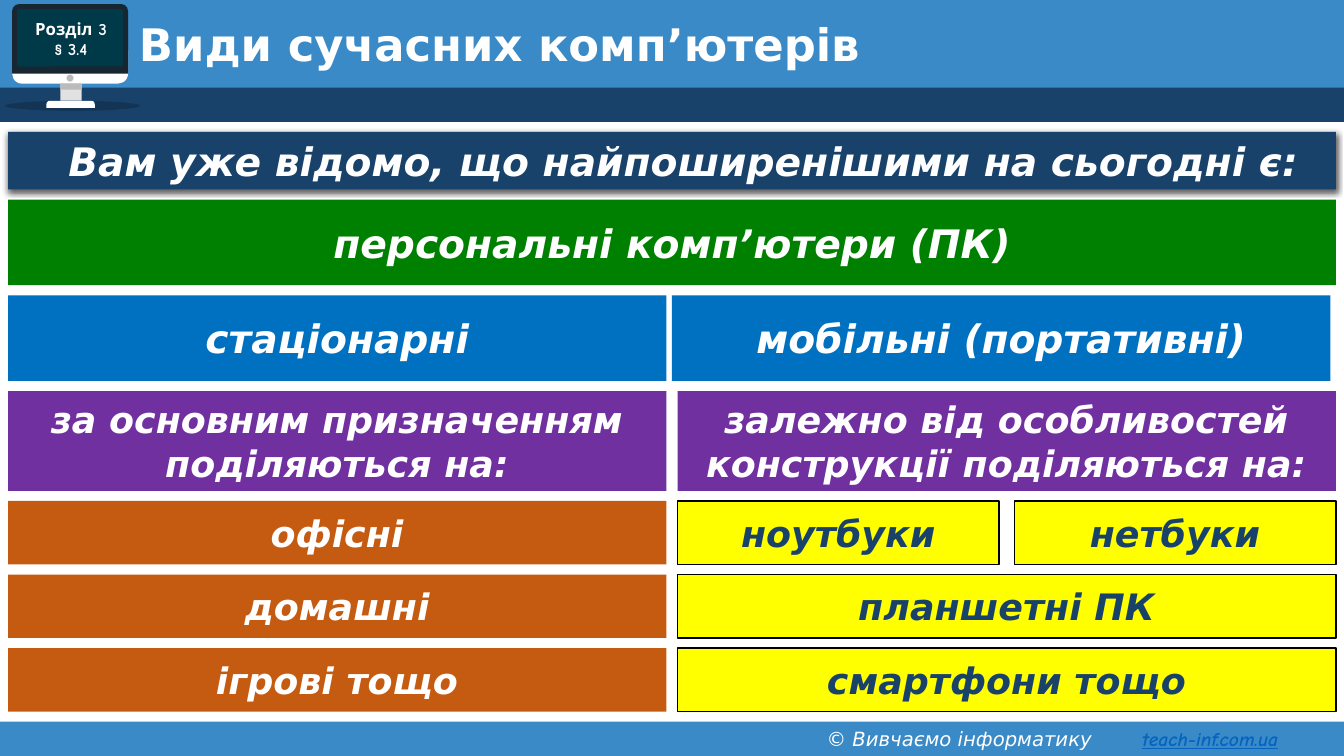
from lxml import etree
from pptx import Presentation, util as u
from pptx.dml.color import RGBColor
from pptx.enum import shapes, text
from pptx.oxml import ns

W, H = 13.33, 7.5
SANS, COMIC = "DejaVu Sans", "Comic Neue"
WHITE, BLACK, NAVY, SKY = "FFFFFF", "000000", "19426B", "398AC7"
RECT, OVAL = shapes.MSO_SHAPE.RECTANGLE, shapes.MSO_SHAPE.OVAL
ROUND, CAPPED = shapes.MSO_SHAPE.ROUNDED_RECTANGLE, shapes.MSO_SHAPE.ROUND_2_SAME_RECTANGLE
CENTER = text.PP_ALIGN.CENTER

# Content
TITLE = "Види сучасних комп’ютерів"
SECTION = ["Розділ 3", "§ 3.4"]
FOOTER, SITE = "© Вивчаємо інформатику", "teach-inf.com.ua"
INTRO = "Вам уже відомо, що найпоширенішими на сьогодні є:"

# Bands: left, top, width, height, fill
BANDS = [
    (0, 0, W, 0.91, SKY),
    (0, 0.87, W, 0.34, NAVY),
    (0, H - 0.34, W, 0.34, SKY),
]
# Monitor parts: preset, box, fill, corner adjustments
MONITOR = [
    (OVAL, (0.05, 1, 1.34, 0.1), BLACK, []),
    (CAPPED, (0.12, 0.5, 1.15, 0.33), WHITE, [0, 0.3]),
    (CAPPED, (0.12, 0.04, 1.15, 0.69), "182632", [0.1, 0]),
    (RECT, (0.6, 0.83, 0.21, 0.17), "E1E1E1", []),
    (RECT, (0.6, 0.83, 0.21, 0.06), "BBBBBB", []),
    (CAPPED, (0.46, 1, 0.48, 0.07), WHITE, [0.5, 0]),
    (OVAL, (0.66, 0.74, 0.07, 0.07), "BBBBBB", []),
    (ROUND, (0.17, 0.09, 1.05, 0.57), "003948", [0.036]),
]

# Grid: two halves, the right one split into two quarters
LEFT, TOP, HALF, COL_GAP, ROW_GAP = 0.08, 1.31, 6.53, 0.11, 0.1
SPLIT_GAP = 0.15
QUARTER = (HALF - SPLIT_GAP) / 2
RIGHT = LEFT + HALF + COL_GAP
COLUMNS = {
    "full": (LEFT, 2 * HALF + COL_GAP),
    "left": (LEFT, HALF),
    "right": (RIGHT, HALF),
    "near": (LEFT + HALF + COL_GAP / 2, HALF),
    "right 1": (RIGHT, QUARTER),
    "right 2": (RIGHT + QUARTER + SPLIT_GAP, QUARTER),
}
# Cell styles: fill, text colour, outline
STYLES = {
    "intro": (NAVY, WHITE, None),
    "pc": ("008000", WHITE, None),
    "kind": ("0070C0", WHITE, None),
    "rule": ("7030A0", WHITE, None),
    "fixed": ("C55A11", WHITE, None),
    "mobile": ("FFFF00", NAVY, BLACK),
}
# Rows: height, text size, cells (column, style, text)
ROWS = [
    (0.57, 28, [("full", "intro", INTRO)]),
    (0.85, 28, [("full", "pc", "персональні комп’ютери (ПК)")]),
    (0.85, 28, [("left", "kind", "стаціонарні"),
                ("near", "kind", "мобільні (портативні)")]),
    (0.99, 26, [("left", "rule", "за основним призначенням поділяються на:"),
                ("right", "rule", "залежно від особливостей конструкції поділяються на:")]),
    (0.63, 26, [("left", "fixed", "офісні"), ("right 1", "mobile", "ноутбуки"),
                ("right 2", "mobile", "нетбуки")]),
    (0.63, 26, [("left", "fixed", "домашні"), ("right", "mobile", "планшетні ПК")]),
    (0.63, 26, [("left", "fixed", "ігрові тощо"), ("right", "mobile", "смартфони тощо")]),
]


def rgb(value):
    return RGBColor.from_string(value)


def inches(box):
    return [u.Inches(v) for v in box]


def add_part(s, preset, box, fill, outline=None, corners=()):
    sp = s.shapes.add_shape(preset, *inches(box))
    sp.shadow.inherit = False
    sp.fill.solid()
    sp.fill.fore_color.rgb = rgb(fill)
    if outline:
        sp.line.color.rgb, sp.line.width = rgb(outline), u.Pt(1)
    else:
        sp.line.fill.background()
    for i, value in enumerate(corners):
        sp.adjustments[i] = value
    return sp


def add_run(p, words, color, size, name=SANS, **form):
    r = p.add_run()
    r.text = words
    r.font.color.rgb = rgb(color)
    for key, value in dict(form, size=u.Pt(size), name=name).items():
        setattr(r.font, key, value)


def add_text(s, box):
    tf = s.shapes.add_textbox(*inches(box)).text_frame
    tf.word_wrap = True
    tf.vertical_anchor = text.MSO_ANCHOR.MIDDLE
    return tf


def add_xml(parent, tag, **attrs):
    return etree.SubElement(parent, ns.qn(tag), attrs)


def draw_frame(s):
    for *box, fill in BANDS:
        add_part(s, RECT, box, fill)

    # Monitor with the section number
    parts = [add_part(s, preset, box, fill, corners=corners)
             for preset, box, fill, corners in MONITOR]
    ground = parts[0].element.spPr.find(".//" + ns.qn("a:srgbClr"))
    add_xml(ground, "a:alpha", val="20000")
    tf = add_text(s, (0.13, 0.09, 1.15, 0.59))
    for i, line in enumerate(SECTION):
        p = tf.add_paragraph() if i else tf.paragraphs[0]
        p.alignment = CENTER
        add_run(p, line, WHITE, 12, COMIC, bold=True)

    # Title
    p = add_text(s, (1.28, 0.18, 11.72, 0.58)).paragraphs[0]
    p.line_spacing = 0.9
    add_run(p, TITLE, WHITE, 32, bold=True)

    # Footer: the site starts at a tab stop
    tf = add_text(s, (8.1, H - 0.34, W - 8.1, 0.34))
    tf.vertical_anchor = text.MSO_ANCHOR.TOP
    p = tf.paragraphs[0]
    tabs = add_xml(p._p.get_or_add_pPr(), "a:tabLst")
    add_xml(tabs, "a:tab", pos=str(u.Inches(3.13)), algn="l")
    add_run(p, FOOTER + "\t", WHITE, 14, italic=True)
    add_run(p, SITE, "0563C1", 14, COMIC, bold=True, italic=True, underline=True)


def draw_grid(s):
    top = TOP
    for height, size, cells in ROWS:
        for column, style, words in cells:
            left, width = COLUMNS[column]
            fill, color, outline = STYLES[style]
            sp = add_part(s, RECT, (left, top, width, height), fill, outline)
            tf = sp.text_frame
            tf.word_wrap = True
            tf.vertical_anchor = text.MSO_ANCHOR.MIDDLE
            p = tf.paragraphs[0]
            p.alignment = CENTER
            if style == "intro":
                p.alignment = text.PP_ALIGN.JUSTIFY
                p._p.get_or_add_pPr().set("indent", str(u.Inches(0.5)))
                add_shadow(sp)
            add_run(p, words, color, size, bold=True, italic=True)
        top += height + ROW_GAP


def add_shadow(sp):
    effects = sp.element.spPr.find(ns.qn("a:effectLst"))
    shadow = add_xml(effects, "a:outerShdw", blurRad=str(u.Pt(4.5)), dist=str(u.Pt(1.5)),
                     dir="5400000", algn="ctr", rotWithShape="0")
    add_xml(add_xml(shadow, "a:srgbClr", val=BLACK), "a:alpha", val="63000")


def main():
    prs = Presentation()
    prs.slide_width, prs.slide_height = inches((W, H))
    s = prs.slides.add_slide(prs.slide_layouts[6])
    draw_frame(s)
    draw_grid(s)
    prs.save("out.pptx")


if __name__ == "__main__":
    main()
